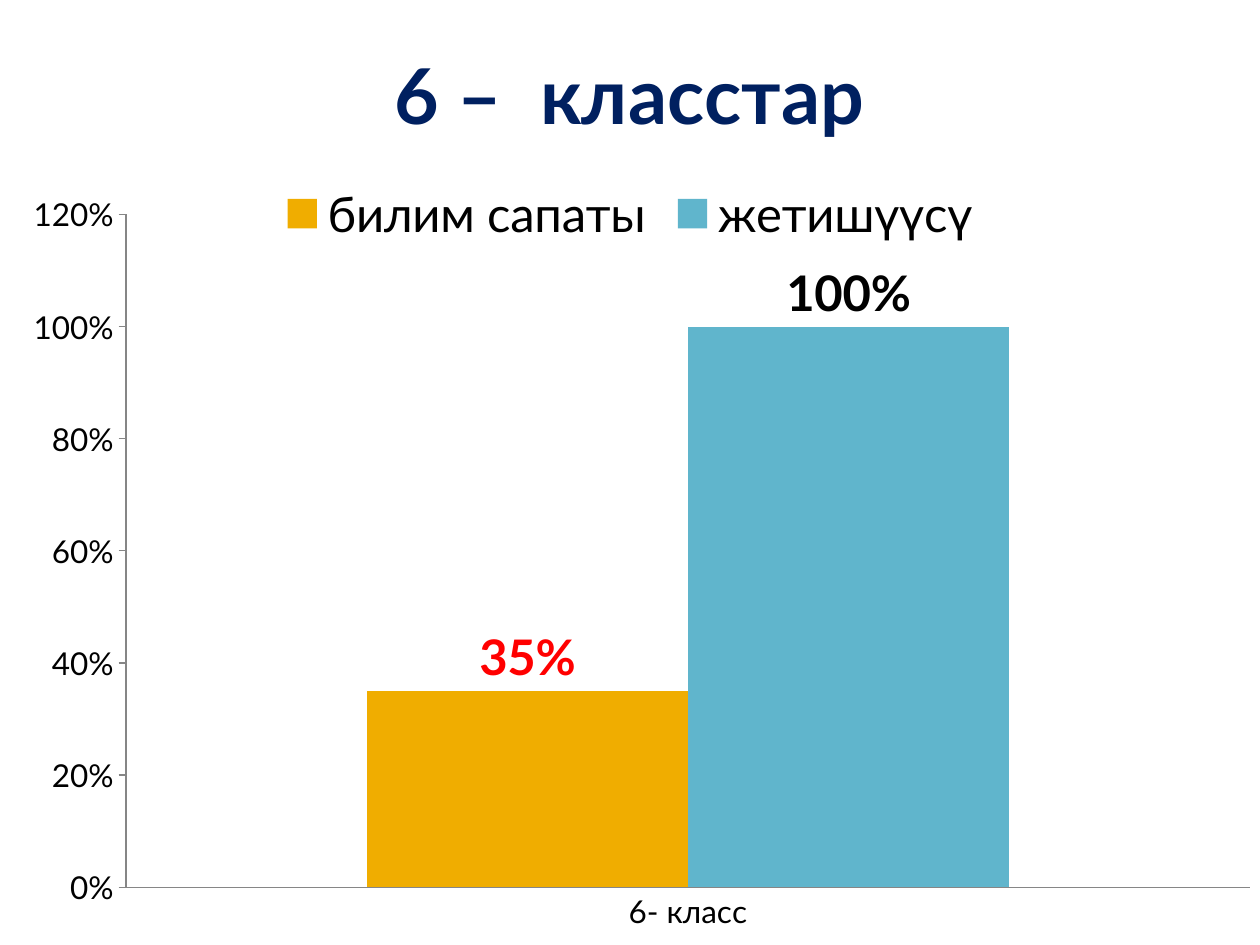
from dataclasses import dataclass

from pptx import Presentation
from pptx.chart.data import CategoryChartData
from pptx.dml.color import RGBColor
from pptx.enum.chart import XL_CHART_TYPE as CT
from pptx.enum.chart import XL_LABEL_POSITION as LP
from pptx.enum.chart import XL_LEGEND_POSITION as LEG
from pptx.enum.chart import XL_TICK_MARK as TICK
from pptx.oxml import parse_xml
from pptx.oxml.ns import nsdecls, qn
from pptx.util import Inches, Pt

TITLE = "6 –  класстар"
CATEGORIES = ["6- класс"]
SERIES = [
    {"name": "билим сапаты", "values": [0.35], "fill": "F0AD00", "label": "FF0000"},
    {"name": "жетишүүсү", "values": [1], "fill": "60B5CC", "label": "000000"},
]
PLOT = {"x": 0.1, "y": 0.227, "w": 0.892, "h": 0.712}


@dataclass(frozen=True)
class Theme:
    face: str = "Lato"
    text: str = "000000"
    title: str = "002060"
    axis: str = "868686"
    body_size: int = 18
    label_size: int = 28
    title_size: int = 44


T = Theme()


def style(font, size, color, bold=False):
    font.name, font.size, font.bold = T.face, Pt(size), bold
    font.color.rgb = RGBColor.from_string(color)


def set_title(chart):
    chart.has_title = True
    tf = chart.chart_title.text_frame
    tf.text = TITLE
    style(tf.paragraphs[0].runs[0].font, T.title_size, T.title, True)
    chart.chart_title.include_in_layout = False


def set_legend(chart):
    chart.has_legend = True
    chart.legend.position = LEG.TOP
    chart.legend.include_in_layout = False
    style(chart.legend.font, T.label_size, T.text)


def set_axes(chart):
    cat, val = chart.category_axis, chart.value_axis
    cat.major_tick_mark = TICK.NONE
    val.major_tick_mark = TICK.OUTSIDE
    val.has_major_gridlines = False
    val.minimum_scale, val.maximum_scale, val.major_unit = 0, 1.2, 0.2
    val.tick_labels.number_format = "0%"
    val.tick_labels.number_format_is_linked = False
    for axis in (cat, val):
        style(axis.tick_labels.font, T.body_size, T.text)
        axis.format.line.color.rgb = RGBColor.from_string(T.axis)
        axis.format.line.width = Pt(0.75)


def set_series(plot):
    plot.gap_width, plot.overlap = 150, 0
    plot.vary_by_categories = False
    for s, spec_row in zip(plot.series, SERIES):
        s.format.fill.solid()
        s.format.fill.fore_color.rgb = RGBColor.from_string(spec_row["fill"])
        labels = s.data_labels
        labels.show_value = True
        labels.number_format = "0%"
        labels.number_format_is_linked = False
        labels.position = LP.OUTSIDE_END
        style(labels.font, T.label_size, spec_row["label"], True)


def place_plot(chart):
    area = chart.plots[0]._element.getparent()
    for old in area.findall(qn("c:layout")):
        area.remove(old)
    modes = "".join(f'<c:{k}Mode val="edge"/>' for k in "xy")
    sizes = "".join(f'<c:{k} val="{v}"/>' for k, v in PLOT.items())
    area.insert(0, parse_xml(
        f'<c:layout {nsdecls("c")}><c:manualLayout><c:layoutTarget val="inner"/>'
        f"{modes}{sizes}</c:manualLayout></c:layout>"))


def main():
    """Build a one-slide deck with a clustered column chart of class results."""
    prs = Presentation()
    prs.slide_width, prs.slide_height = Inches(10), Inches(7.5)
    slide = prs.slides.add_slide(prs.slide_layouts[6])
    data = CategoryChartData(number_format="0%")
    data.categories = CATEGORIES
    for row in SERIES:
        data.add_series(row["name"], row["values"])
    chart = slide.shapes.add_chart(
        CT.COLUMN_CLUSTERED, 0, 0, prs.slide_width, prs.slide_height, data).chart
    style(chart.font, T.body_size, T.text)
    set_title(chart)
    set_legend(chart)
    set_axes(chart)
    set_series(chart.plots[0])
    place_plot(chart)
    prs.save("out.pptx")


if __name__ == "__main__":
    main()
